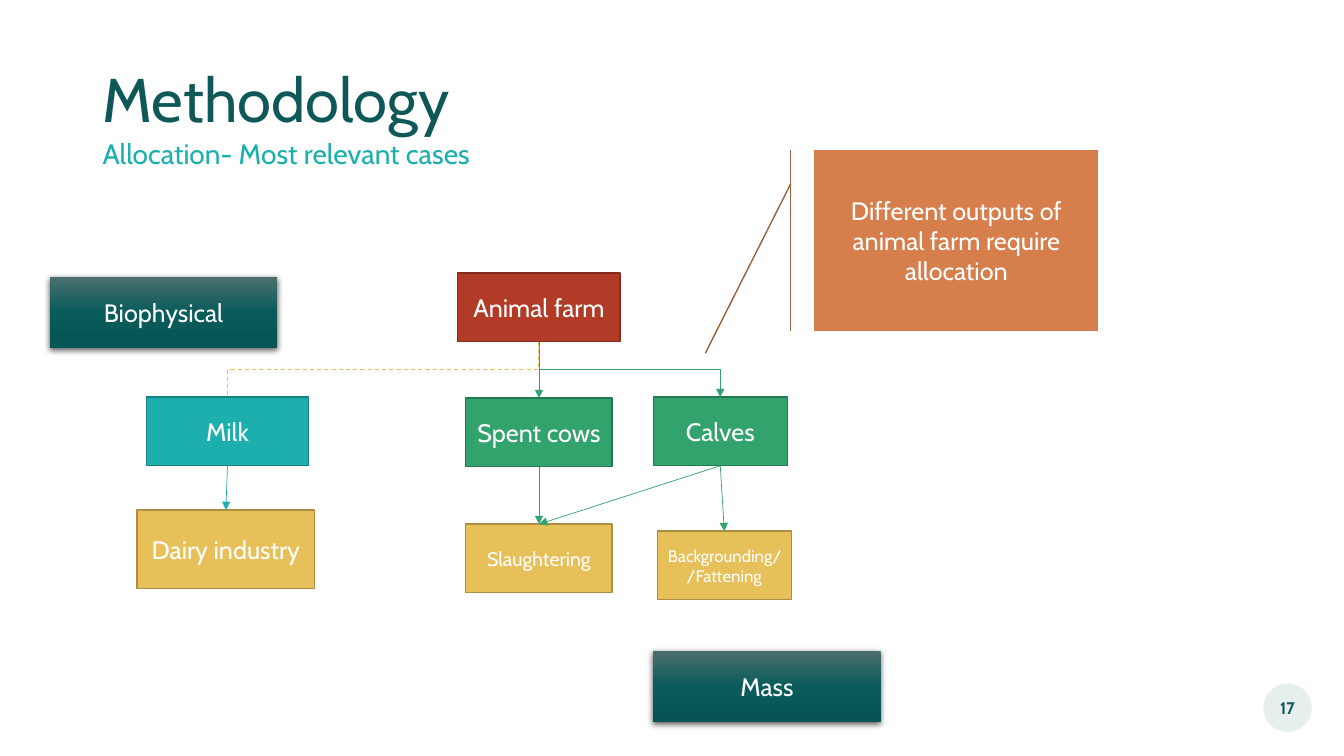
from copy import deepcopy
from dataclasses import dataclass

from lxml.etree import SubElement
from pptx import Presentation
from pptx.dml.color import RGBColor
from pptx.enum.dml import MSO_LINE
from pptx.enum.shapes import MSO_CONNECTOR, MSO_SHAPE
from pptx.enum.text import MSO_ANCHOR, PP_ALIGN
from pptx.oxml.ns import qn
from pptx.util import Pt


@dataclass(frozen=True)
class Theme:
    """Colours, font and type sizes of the slide."""
    font: str = "Cabin"
    white: str = "FFFFFF"
    dark: str = "0F5858"
    teal: str = "1DAFAE"
    teal_edge: str = "158181"
    red: str = "B23B27"
    red_edge: str = "842C1D"
    green: str = "32A36D"
    green_edge: str = "257951"
    yellow: str = "E8C05A"
    yellow_edge: str = "AC8E43"
    orange: str = "D67F4D"
    orange_edge: str = "9E5E39"
    badge: str = "E7EEEE"
    gradient: tuple = ((0, "4C6E6E"), (50, "0A5B5B"), (100, "065454"))
    title: int = 44
    subtitle: int = 20
    body: int = 18
    small: int = 14
    tiny: int = 12


THEME = Theme()


def rgb(code):
    """Return the colour for a hex code."""
    return RGBColor.from_string(code)


def write(shape, text, size, color, align=PP_ALIGN.CENTER, anchor=MSO_ANCHOR.MIDDLE):
    """Put one styled paragraph in a shape and return it."""
    frame = shape.text_frame
    frame.word_wrap = True
    frame.vertical_anchor = anchor
    paragraph = frame.paragraphs[0]
    paragraph.text = text
    paragraph.alignment = align
    paragraph.font.name = THEME.font
    paragraph.font.size = Pt(size)
    paragraph.font.color.rgb = rgb(color)
    return paragraph


def add_box(slide, box, text, fill, edge=None, size=THEME.body, color=THEME.white,
            kind=MSO_SHAPE.RECTANGLE):
    """Add a filled preset shape with centred text."""
    shape = slide.shapes.add_shape(kind, *map(Pt, box))
    shape.fill.solid()
    shape.fill.fore_color.rgb = rgb(fill)
    if edge:
        shape.line.color.rgb = rgb(edge)
        shape.line.width = Pt(1)
    else:
        shape.line.fill.background()
    shape.shadow.inherit = False
    write(shape, text, size, color)
    return shape


def style_line(connector, color, width=0.5, dashed=False):
    """Style a connector: dashed and plain, or solid with an arrowhead."""
    connector.line.color.rgb = rgb(color)
    connector.line.width = Pt(width)
    properties = connector._element.spPr
    if dashed:
        connector.line.dash_style = MSO_LINE.DASH
    else:
        SubElement(properties.find(qn("a:ln")), qn("a:tailEnd"), type="triangle")
    SubElement(properties, qn("a:effectLst"))


def add_arrow(slide, source, target, color):
    """Join the bottom of one box to the top of another."""
    arrow = slide.shapes.add_connector(MSO_CONNECTOR.STRAIGHT, 0, 0, 0, 0)
    arrow.begin_connect(source, 2)
    arrow.end_connect(target, 0)
    style_line(arrow, color)


def add_elbow(slide, source, target, color, width=0.5, dashed=False):
    """Run a bent line from the bottom of one box to the top of another."""
    start_x, start_y = source.left + source.width // 2, source.top + source.height
    end_x, end_y = target.left + target.width // 2, target.top
    drop, span = end_y - start_y, abs(end_x - start_x)
    left = (start_x + end_x - drop) // 2
    top = (start_y + end_y - span) // 2
    rightward = end_x > start_x
    near, far = (left + drop, left) if rightward else (left, left + drop)
    elbow = slide.shapes.add_connector(MSO_CONNECTOR.ELBOW, near, top, far, top + span)
    turn = 270 if rightward else 90
    elbow._element.spPr.find(qn("a:xfrm")).set("rot", str(turn * 60000))
    style_line(elbow, color, width, dashed)


def add_heading(slide, left, top):
    """Add the title and the subtitle below it."""
    title = slide.shapes.add_textbox(Pt(left), Pt(top), Pt(545), Pt(46.8))
    write(title, "Methodology", THEME.title, THEME.dark,
          PP_ALIGN.LEFT, MSO_ANCHOR.BOTTOM).line_spacing = 0.7
    subtitle = slide.shapes.add_textbox(Pt(left), Pt(top + 46.8), Pt(398), Pt(28))
    write(subtitle, "Allocation- Most relevant cases", THEME.subtitle, THEME.teal,
          PP_ALIGN.LEFT, MSO_ANCHOR.TOP).line_spacing = 0.8


def add_flow(slide, left, top):
    """Add the farm, its outputs and the stages that follow them."""
    red = THEME.red, THEME.red_edge
    teal = THEME.teal, THEME.teal_edge
    green = THEME.green, THEME.green_edge
    yellow = THEME.yellow, THEME.yellow_edge
    stages = (
        ("Animal farm", 229, 0, 116, 49, red, THEME.body),
        ("Milk", 6.5, 88.7, 116, 49, teal, THEME.body),
        ("Dairy industry", 0, 169.3, 126.7, 56.2, yellow, THEME.body),
        ("Spent cows", 234.7, 89.4, 104.6, 49, green, THEME.body),
        ("Calves", 368.6, 88.7, 95.8, 49, green, THEME.body),
        ("Slaughtering", 234.7, 179.4, 104.6, 49, yellow, THEME.small),
        ("Backgrounding//Fattening", 371.5, 184.4, 95.8, 49, yellow, THEME.tiny),
    )
    farm, milk, dairy, cows, calves, slaughter, fattening = (
        add_box(slide, (left + x, top + y, width, height), text, *colors, size)
        for text, x, y, width, height, colors, size in stages
    )
    add_elbow(slide, farm, milk, THEME.yellow, 0.75, dashed=True)
    add_elbow(slide, farm, calves, THEME.green)
    for source, target, color in (
        (farm, cows, THEME.green),
        (cows, slaughter, THEME.green),
        (calves, slaughter, THEME.green),
        (calves, fattening, THEME.green),
        (milk, dairy, THEME.teal),
    ):
        add_arrow(slide, source, target, color)


def add_method(slide, left, top, text):
    """Add a shaded label that names an allocation method."""
    label = add_box(slide, (left, top, 162.4, 51), text, THEME.dark)
    label.fill.gradient()
    label.fill.gradient_angle = 270
    properties = label._element.spPr
    stops = properties.find(".//" + qn("a:gsLst"))
    stops.insert(1, deepcopy(stops[0]))
    for stop, (position, color) in zip(label.fill.gradient_stops, THEME.gradient):
        stop.position = position / 100
        stop.color.rgb = rgb(color)
    shadow = SubElement(properties.find(qn("a:effectLst")), qn("a:outerShdw"),
                        blurRad=str(Pt(4.5)), dist=str(Pt(1.5)), dir="5400000",
                        algn="ctr", rotWithShape="0")
    black = SubElement(shadow, qn("a:srgbClr"), val="000000")
    SubElement(black, qn("a:alpha"), val="63000")


def add_page_number(slide, left, top, diameter):
    """Add the page number in its round badge."""
    badge = add_box(slide, (left, top, diameter, diameter), "17", THEME.badge,
                    size=THEME.tiny, color=THEME.dark, kind=MSO_SHAPE.OVAL)
    frame = badge.text_frame
    frame.margin_left = frame.margin_right = 0
    frame.paragraphs[0].font.bold = True


def main():
    """Build the slide and save it."""
    deck = Presentation()
    deck.slide_width, deck.slide_height = Pt(960), Pt(540)
    slide = deck.slides.add_slide(deck.slide_layouts[6])
    add_page_number(slide, 902.4, 488.2, 34.6)
    add_heading(slide, 66.2, 51.8)
    add_flow(slide, 98, 195)
    add_box(slide, (581.6, 107.3, 203, 128.9),
            "Different outputs of animal farm require allocation",
            THEME.orange, THEME.orange_edge, kind=MSO_SHAPE.LINE_CALLOUT_1_ACCENT_BAR)
    add_method(slide, 35.6, 197.6, "Biophysical")
    add_method(slide, 466.6, 465, "Mass")
    deck.save("out.pptx")


if __name__ == "__main__":
    main()
